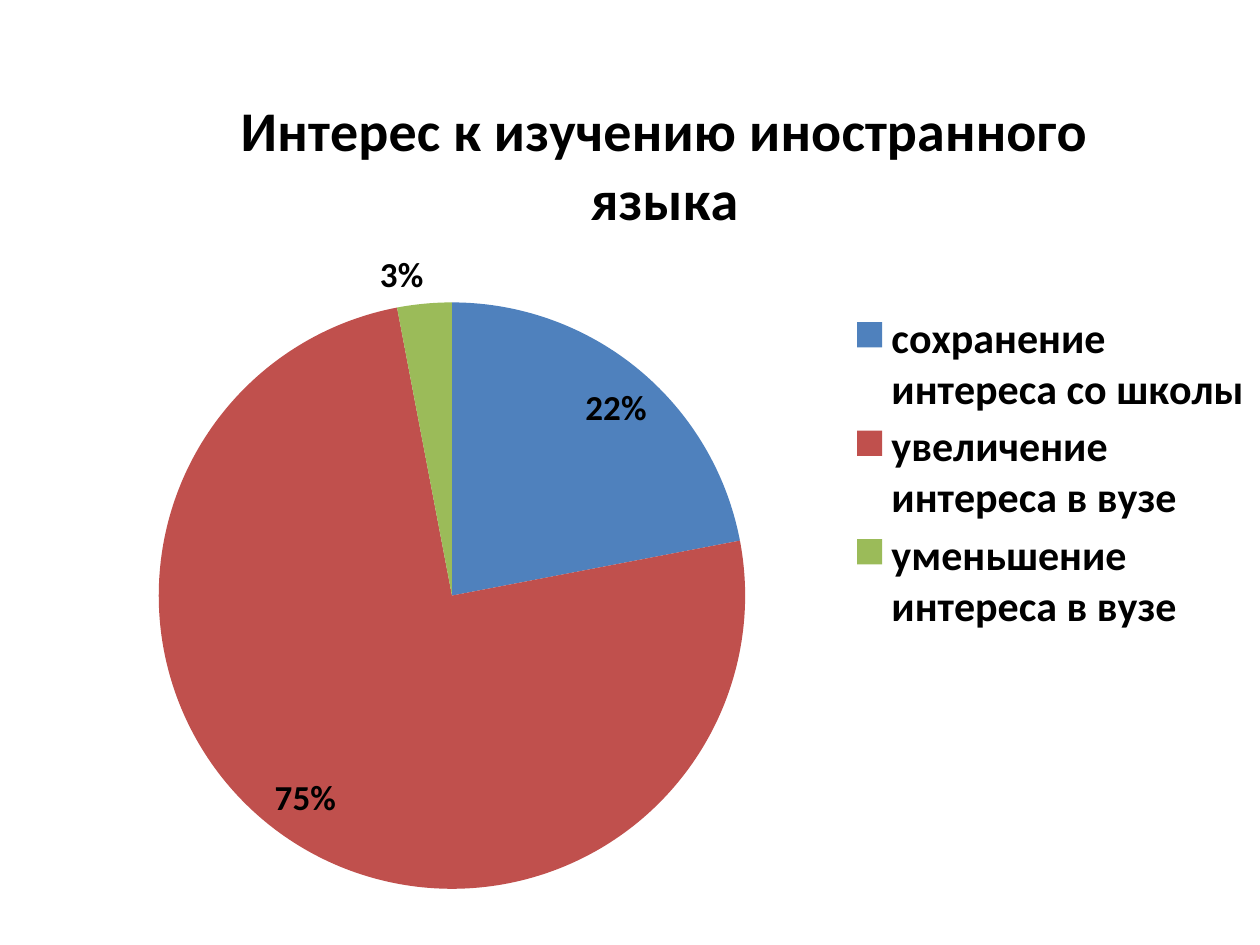
from lxml import etree
from pptx import Presentation
from pptx.chart.data import CategoryChartData
from pptx.dml.color import RGBColor
from pptx.enum.chart import XL_CHART_TYPE, XL_LABEL_POSITION, XL_LEGEND_POSITION
from pptx.oxml import parse_xml
from pptx.util import Pt

PIE = XL_CHART_TYPE.PIE
BEST_FIT = XL_LABEL_POSITION.BEST_FIT
RIGHT = XL_LEGEND_POSITION.RIGHT

PX = 914400 // 126
C_NS = "http://schemas.openxmlformats.org/drawingml/2006/chart"
COLORS = {"text": "000000", "kept": "4F81BD", "grown": "C0504D", "fallen": "9BBB59"}


def set_font(font, size, bold=True, color="text", name="Calibri"):
    font.name, font.size, font.bold = name, Pt(size), bold
    font.color.rgb = RGBColor.from_string(COLORS[color])


def write_text(tf, text, **fmt):
    p = tf.paragraphs[0]
    r = p.add_run()
    r.text = text
    set_font(r.font, **fmt)


def set_layout(element, target=None, **fractions):
    """Place a chart part by fractions of the chart area."""
    for old in element.findall(f"{{{C_NS}}}layout"):
        element.remove(old)
    layout = parse_xml(f'<c:layout xmlns:c="{C_NS}"><c:manualLayout/></c:layout>')
    values = {"layoutTarget": target} if target else {}
    values.update(xMode="edge", yMode="edge", **fractions)
    for tag, value in values.items():
        etree.SubElement(layout[0], f"{{{C_NS}}}{tag}").set("val", str(value))
    # The layout follows the title text or legend position, and leads the plot area
    element.insert(0 if target else 1, layout)


class Deck:
    def __init__(self, width, height):
        self.prs = Presentation()
        self.prs.slide_width, self.prs.slide_height = width * PX, height * PX
        self.s = self.prs.slides.add_slide(self.prs.slide_layouts[6])

    def pie(self, box, title, slices):
        data = CategoryChartData(number_format="0%")
        data.categories = [name for name, _, _ in slices]
        data.add_series("Series 1", [value for _, value, _ in slices])
        chart = self.s.shapes.add_chart(PIE, *(v * PX for v in box), data).chart
        set_font(chart.font, size=10, bold=False)

        # Title
        chart.has_title = True
        write_text(chart.chart_title.text_frame, title, size=32)
        chart.chart_title.include_in_layout = False

        # Slices
        plot = chart.plots[0]
        plot.vary_by_categories = True
        for i, (_, _, color) in enumerate(slices):
            fill = plot.series[0].points[i].format.fill
            fill.solid()
            fill.fore_color.rgb = RGBColor.from_string(COLORS[color])

        # Percent labels
        plot.has_data_labels = True
        labels = plot.data_labels
        labels.show_value = True
        labels.number_format, labels.number_format_is_linked = "0%", False
        labels.position = BEST_FIT
        set_font(labels.font, size=20)

        # Legend
        chart.has_legend = True
        chart.legend.position = RIGHT
        chart.legend.include_in_layout = False
        set_font(chart.legend.font, size=24)
        return chart


def main():
    deck = Deck(1260, 945)
    chart = deck.pie(
        (63, 37, 1197, 873),
        "Интерес к изучению иностранного языка",
        [
            ("сохранение интереса со школы", 0.22, "kept"),
            ("увеличение интереса в вузе", 0.75, "grown"),
            ("уменьшение интереса в вузе", 0.03, "fallen"),
        ],
    )

    # Positions inside the chart area
    set_layout(chart.chart_title._element, x=0.14, y=0.05)
    set_layout(chart.plots[0]._element.getparent(), "inner", x=0.08, y=0.3, w=0.49, h=0.68)
    set_layout(chart.legend._element, x=0.65, y=0.31, w=0.35, h=0.38)

    deck.prs.save("out.pptx")


if __name__ == "__main__":
    main()
